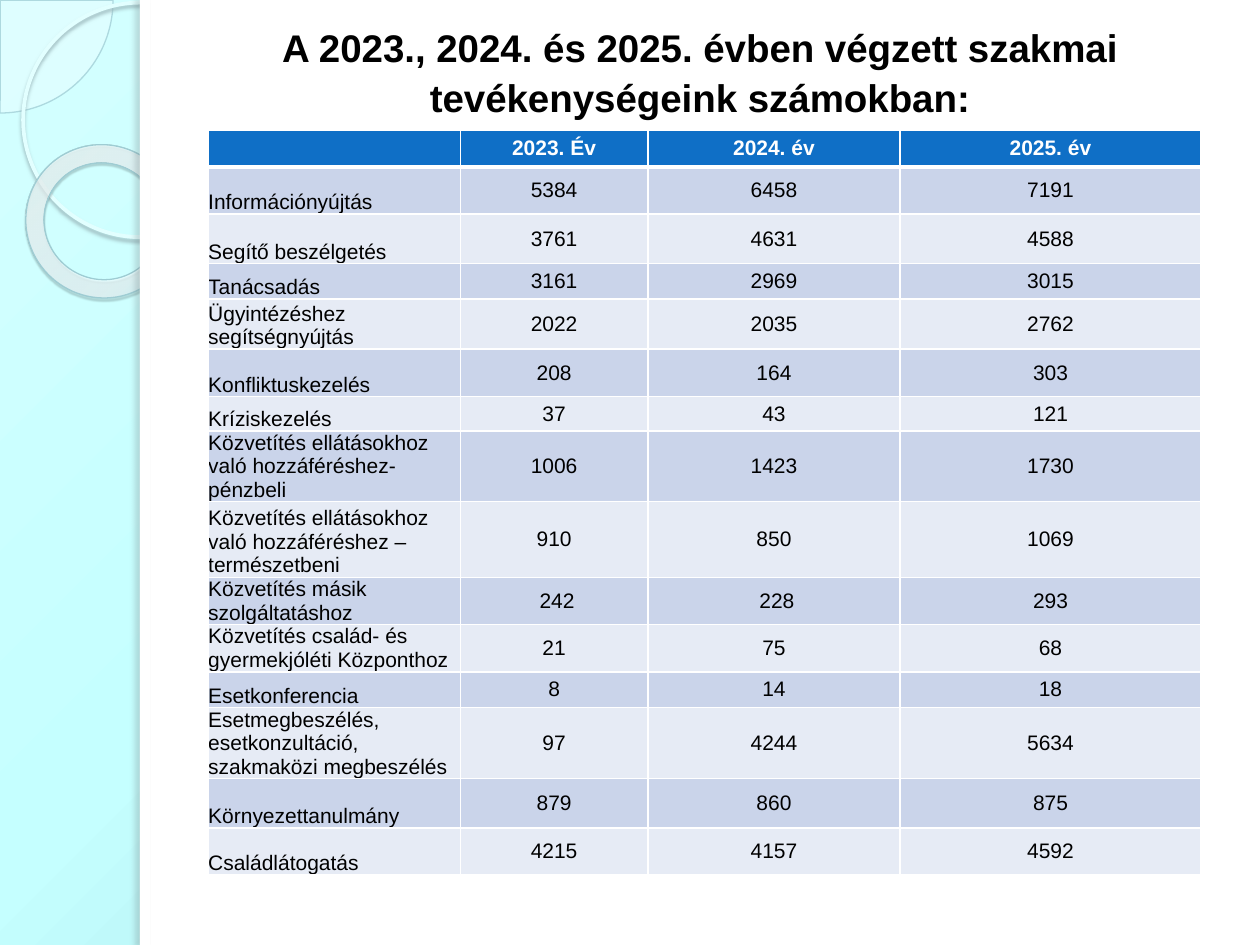
from lxml.etree import SubElement
from pptx import Presentation
from pptx.dml.color import RGBColor
from pptx.enum.shapes import MSO_SHAPE
from pptx.enum.text import MSO_ANCHOR, MSO_AUTO_SIZE, PP_ALIGN
from pptx.oxml.ns import qn
from pptx.util import Pt

FONT = "Arial"
HEADER_FILL = "0F6FC6"
BAND_FILLS = ("CAD4EA", "E6EBF5")
COLUMN_WIDTHS = (144, 107.3, 144, 172)
ROW_HEIGHTS = (21.2, 26.9, 28.3, 20.2, 28.6, 27.2, 19.8, 40.2,
               43.2, 27, 27, 20.4, 40.6, 28.2, 27)
ROWS = (
    ("", "2023. Év", "2024. év", "2025. év"),
    ("Információnyújtás", "5384", "6458", "7191"),
    ("Segítő beszélgetés", "3761", "4631", "4588"),
    ("Tanácsadás", "3161", "2969", "3015"),
    ("Ügyintézéshez segítségnyújtás", "2022", "2035", "2762"),
    ("Konfliktuskezelés", "208", "164", "303"),
    ("Kríziskezelés", "37", "43", "121"),
    ("Közvetítés ellátásokhoz való hozzáféréshez- pénzbeli", "1006", "1423", "1730"),
    ("Közvetítés ellátásokhoz való hozzáféréshez – természetbeni", "910", "850", "1069"),
    ("Közvetítés másik szolgáltatáshoz", " 242", " 228", "293"),
    ("Közvetítés család- és gyermekjóléti Központhoz", "21", "75", "68"),
    ("Esetkonferencia", "8", "14", "18"),
    ("Esetmegbeszélés, esetkonzultáció, szakmaközi megbeszélés", "97", "4244", "5634"),
    ("Környezettanulmány", "879", "860", "875"),
    ("Családlátogatás", "4215", "4157", "4592"),
)


def color(value):
    """Return the colour for a hex string."""
    return RGBColor.from_string(value)


def add_color(parent, value, opacity=100):
    """Append a colour with an opacity in percent to an XML element."""
    element = SubElement(parent, qn("a:srgbClr"), val=value)
    if opacity < 100:
        SubElement(element, qn("a:alpha"), val=str(opacity * 1000))


def set_radial_gradient(fill, properties, stops):
    """Fill with a circular gradient that starts at the top left corner."""
    fill.gradient()
    gradient = properties.find(qn("a:gradFill"))
    for child in list(gradient):
        gradient.remove(child)
    stop_list = SubElement(gradient, qn("a:gsLst"))
    for position, value, opacity in stops:
        stop = SubElement(stop_list, qn("a:gs"), pos=str(position * 1000))
        add_color(stop, value, opacity)
    circle = SubElement(gradient, qn("a:path"), path="circle")
    SubElement(circle, qn("a:fillToRect"), l="0", t="0", r="100000", b="100000")


def add_shadow(shape, value, opacity, blur, distance, angle):
    """Give a shape an outer shadow."""
    effects = shape._element.spPr.find(qn("a:effectLst"))
    shadow = SubElement(
        effects, qn("a:outerShdw"), blurRad=str(Pt(blur)), dist=str(Pt(distance)),
        dir=str(angle * 60000), algn="tl", rotWithShape="0")
    add_color(shadow, value, opacity)


def add_plain_shape(page, kind, left, top, width, height, fill=None, opacity=100, line=None):
    """Add a preset shape with a solid or no fill and an optional (colour, width) line."""
    shape = page.shapes.add_shape(kind, Pt(left), Pt(top), Pt(width), Pt(height))
    shape.shadow.inherit = False
    if fill:
        shape.fill.solid()
        shape.fill.fore_color.rgb = color(fill)
        if opacity < 100:
            solid = shape._element.spPr.find(qn("a:solidFill"))
            SubElement(solid[0], qn("a:alpha"), val=str(opacity * 1000))
    else:
        shape.fill.background()
    if line:
        shape.line.color.rgb = color(line[0])
        shape.line.width = Pt(line[1])
    else:
        shape.line.fill.background()
    return shape


def add_side_decoration(page):
    """Draw the tinted side strip with its rings and the white content panel."""
    page.background.fill.solid()
    background = page._element.find(".//" + qn("p:bgPr"))
    set_radial_gradient(page.background.fill, background,
                        ((0, "D4FFFF", 100), (40, "C5FFFF", 100), (100, "8FCBD3", 100)))
    quarter = add_plain_shape(page, MSO_SHAPE.PIE, -64.4, -64.4, 129, 129,
                              "F5FEFF", 33, ("ADD9DF", 0.75))
    quarter.adjustments[0] = 0
    quarter.adjustments[1] = 54.02
    circle = add_plain_shape(page, MSO_SHAPE.OVAL, 13.2, 1.5, 134, 134, line=("E2FFFF", 2.15))
    add_shadow(circle, "99B6BA", 85, 2, 2, 90)
    ring = add_plain_shape(page, MSO_SHAPE.DONUT, 14.4, 83, 88.6, 87, line=("9ECCD3", 0.75))
    ring.adjustments[0] = 0.12
    ring.rotation = 38.6
    set_radial_gradient(ring.fill, ring._element.spPr,
                        ((0, "F7FEFE", 70), (70, "F9FEFF", 55), (100, "9CEEFD", 60)))
    add_shadow(ring, "465A5C", 35, 1, 1.2, 75)
    add_plain_shape(page, MSO_SHAPE.RECTANGLE, 80, 0, 640, 540, "FFFFFF")
    edge = add_plain_shape(page, MSO_SHAPE.RECTANGLE, 80, 0, 5.8, 540, "FFFFFF")
    add_shadow(edge, "687577", 25, 3, 3, 180)


def style_paragraph(paragraph, size, value, bold, alignment):
    """Set the font and alignment of a paragraph."""
    paragraph.alignment = alignment
    paragraph.font.name = FONT
    paragraph.font.size = Pt(size)
    paragraph.font.bold = bold
    paragraph.font.color.rgb = color(value)


def add_title(page, text):
    """Place the slide title and bring it to the front."""
    title = page.shapes.title
    title.left, title.top, title.width, title.height = Pt(113.8), Pt(13), Pt(572.4), Pt(54.7)
    frame = title.text_frame
    frame.text = text
    frame.word_wrap = True
    frame.auto_size = MSO_AUTO_SIZE.NONE
    frame.vertical_anchor = MSO_ANCHOR.MIDDLE
    paragraph = frame.paragraphs[0]
    style_paragraph(paragraph, 22, "000000", True, PP_ALIGN.CENTER)
    paragraph.line_spacing = 1.07
    page.shapes._spTree.append(title._element)


def set_borders(cell, top, bottom):
    """Give a cell white borders, with the top and bottom widths in points."""
    properties = cell._tc.get_or_add_tcPr()
    for index, (side, width) in enumerate((("L", 1), ("R", 1), ("T", top), ("B", bottom))):
        line = SubElement(properties, qn("a:ln" + side), w=str(Pt(width)))
        add_color(SubElement(line, qn("a:solidFill")), "FFFFFF")
        properties.insert(index, line)


def fill_cell(cell, text, row, column):
    """Write and format one table cell."""
    header = row == 0
    cell.text = text
    margin = (7.2, 3.6) if header and text else (0, 0)
    cell.margin_left = cell.margin_right = Pt(margin[0])
    cell.margin_top = cell.margin_bottom = Pt(margin[1])
    if header:
        cell.vertical_anchor = MSO_ANCHOR.TOP
    else:
        cell.vertical_anchor = MSO_ANCHOR.MIDDLE if column else MSO_ANCHOR.BOTTOM
    cell.fill.solid()
    cell.fill.fore_color.rgb = color(HEADER_FILL if header else BAND_FILLS[(row - 1) % 2])
    set_borders(cell, 3 if row == 1 else 1, 3 if header else 1)
    style_paragraph(cell.text_frame.paragraphs[0], 12, "FFFFFF" if header else "000000",
                    header, PP_ALIGN.CENTER if column else PP_ALIGN.LEFT)


def add_activity_table(page):
    """Add the table of yearly activity counts."""
    table = page.shapes.add_table(
        len(ROWS), len(COLUMN_WIDTHS), Pt(119), Pt(74.3),
        Pt(sum(COLUMN_WIDTHS)), Pt(sum(ROW_HEIGHTS))).table
    for column, width in zip(table.columns, COLUMN_WIDTHS):
        column.width = Pt(width)
    for row, height in zip(table.rows, ROW_HEIGHTS):
        row.height = Pt(height)
    for row, texts in enumerate(ROWS):
        for column, text in enumerate(texts):
            fill_cell(table.cell(row, column), text, row, column)


def main():
    """Build and save the deck."""
    deck = Presentation()
    deck.slide_width, deck.slide_height = Pt(720), Pt(540)
    page = deck.slides.add_slide(deck.slide_layouts[5])
    add_side_decoration(page)
    add_title(page, "A 2023., 2024. és 2025. évben végzett szakmai tevékenységeink számokban:")
    add_activity_table(page)
    deck.save("out.pptx")


if __name__ == "__main__":
    main()
